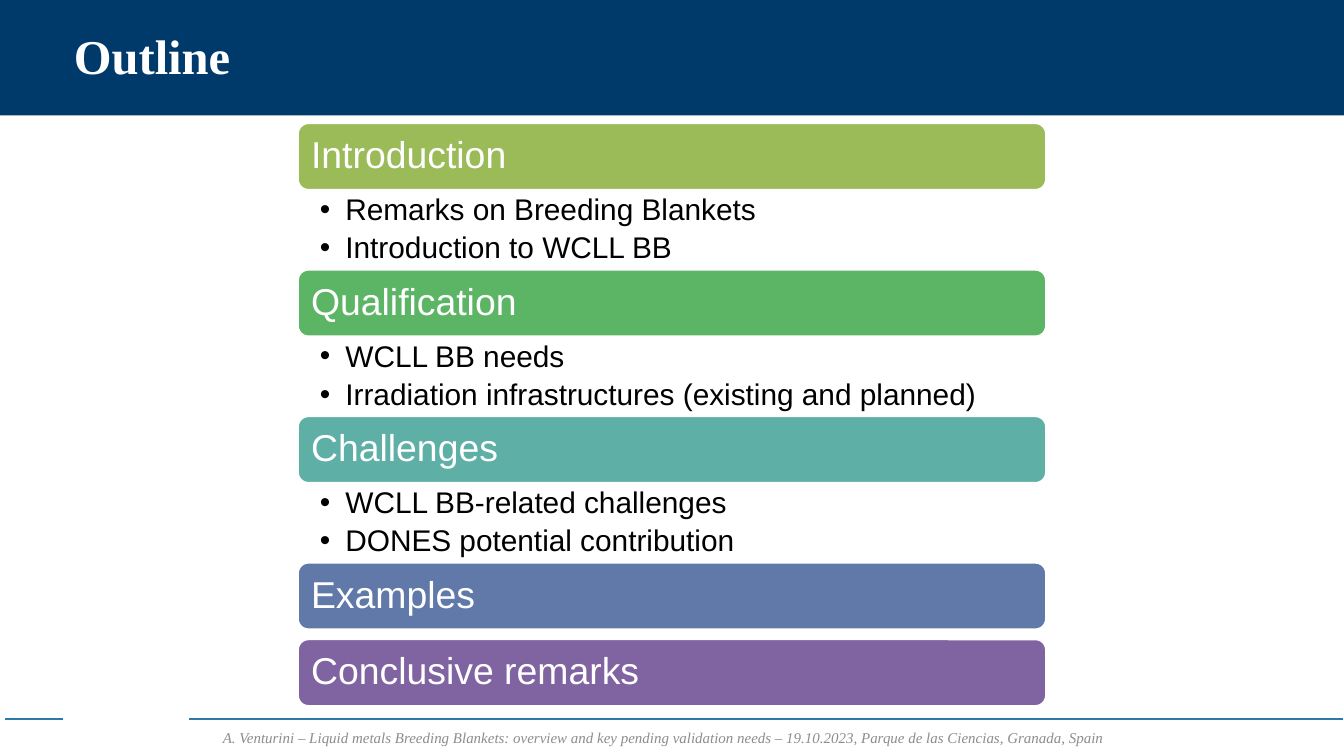
from lxml import etree
from pptx import Presentation
from pptx.dml.color import RGBColor
from pptx.enum.shapes import MSO_CONNECTOR, MSO_SHAPE
from pptx.enum.text import MSO_ANCHOR, PP_ALIGN
from pptx.oxml.ns import qn
from pptx.util import Inches, Pt

# Content
TITLE = "Outline"
FOOTER = ("A. Venturini – Liquid metals Breeding Blankets: overview and key pending "
          "validation needs – 19.10.2023, Parque de las Ciencias, Granada, Spain")
SECTIONS = [
    ("Introduction", "olive", ["Remarks on Breeding Blankets", "Introduction to WCLL BB"]),
    ("Qualification", "green", ["WCLL BB needs",
                                "Irradiation infrastructures (existing and planned)"]),
    ("Challenges", "teal", ["WCLL BB-related challenges", "DONES potential contribution"]),
    ("Examples", "blue", []),
    ("Conclusive remarks", "purple", []),
]
COLORS = {
    "navy": "003A6A", "rule": "2D79AA", "gray": "8C8C8C", "white": "FFFFFF",
    "black": "000000", "olive": "9BBB59", "green": "5CB565", "teal": "5EAFA6",
    "blue": "6179A8", "purple": "8064A2",
}

# Layout, in inches
SLIDE_WIDTH = 10
SLIDE_HEIGHT = SLIDE_WIDTH * 9 / 16
BAR_LEFT, BAR_TOP, BAR_WIDTH, BAR_HEIGHT = 2.21, 0.91, 5.58, 0.51
BULLETS_HEIGHT, BAR_GAP = 0.58, 0.06
BULLET_INDENT = 0.19
RULE_Y = 5.35
RULES = [(0.04, 0.47), (1.41, 9.99)]


def color(name):
    return RGBColor.from_string(COLORS[name])


def box(left, top, width, height):
    return [Inches(value) for value in (left, top, width, height)]


def set_frame(frame, anchor, insets):
    frame.word_wrap = True
    frame.vertical_anchor = anchor
    (frame.margin_left, frame.margin_top,
     frame.margin_right, frame.margin_bottom) = [Inches(inset) for inset in insets]


def write(paragraph, text, font_name, size, color_name, bold=False, italic=False):
    paragraph.alignment = PP_ALIGN.LEFT
    run = paragraph.add_run()
    run.text = text
    run.font.name = font_name
    run.font.size = Pt(size)
    run.font.bold = bold
    run.font.italic = italic
    run.font.color.rgb = color(color_name)


def add_bullet(paragraph):
    properties = paragraph._p.get_or_add_pPr()
    properties.set("marL", str(Inches(BULLET_INDENT)))
    properties.set("indent", str(-Inches(BULLET_INDENT)))
    etree.SubElement(properties, qn("a:buFont")).set("typeface", "Arial")
    etree.SubElement(properties, qn("a:buChar")).set("char", "•")


def add_bar(slide, top, text, fill):
    bar = slide.shapes.add_shape(MSO_SHAPE.ROUNDED_RECTANGLE,
                                 *box(BAR_LEFT, top, BAR_WIDTH, BAR_HEIGHT))
    bar.shadow.inherit = False
    bar.fill.solid()
    bar.fill.fore_color.rgb = color(fill)
    bar.line.color.rgb = color("white")
    bar.line.width = Pt(2)
    set_frame(bar.text_frame, MSO_ANCHOR.MIDDLE, (0.08, 0.08, 0.08, 0.08))
    paragraph = bar.text_frame.paragraphs[0]
    paragraph.line_spacing = 0.9
    write(paragraph, text, "Arial", 20, "white")


def add_bullets(slide, top, items):
    text_box = slide.shapes.add_textbox(*box(BAR_LEFT, top, BAR_WIDTH, BULLETS_HEIGHT))
    frame = text_box.text_frame
    set_frame(frame, MSO_ANCHOR.TOP, (0.17, 0.03, 0.16, 0.03))
    for index, item in enumerate(items):
        paragraph = frame.add_paragraph() if index else frame.paragraphs[0]
        paragraph.line_spacing = 0.9
        paragraph.space_after = Pt(3.2)
        add_bullet(paragraph)
        write(paragraph, item, "Arial", 16, "black")


def main():
    presentation = Presentation()
    presentation.slide_width = Inches(SLIDE_WIDTH)
    presentation.slide_height = Inches(SLIDE_HEIGHT)
    slide = presentation.slides.add_slide(presentation.slide_layouts[5])

    # Header band, placed behind the title
    band = slide.shapes.add_shape(MSO_SHAPE.RECTANGLE, *box(0, 0, SLIDE_WIDTH, 0.86))
    band.shadow.inherit = False
    band.fill.solid()
    band.fill.fore_color.rgb = color("navy")
    band.line.fill.background()
    slide.shapes._spTree.insert(2, band._element)

    # Title
    title = slide.shapes.title
    title.left, title.top, title.width, title.height = box(0.45, 0.19, 9, 0.44)
    set_frame(title.text_frame, MSO_ANCHOR.MIDDLE, (0.1, 0, 0.1, 0))
    write(title.text_frame.paragraphs[0], TITLE, "Times New Roman", 26, "white", bold=True)

    # Footer text and rules
    footer = slide.shapes.add_textbox(*box(1.56, RULE_Y, 8.2, 0.28))
    set_frame(footer.text_frame, MSO_ANCHOR.MIDDLE, (0.1, 0.05, 0.1, 0.05))
    write(footer.text_frame.paragraphs[0], FOOTER, "Times New Roman", 8, "gray", italic=True)
    for start, end in RULES:
        rule = slide.shapes.add_connector(MSO_CONNECTOR.STRAIGHT, Inches(start),
                                          Inches(RULE_Y), Inches(end), Inches(RULE_Y))
        rule.line.color.rgb = color("rule")
        rule.line.width = Pt(1.5)
        etree.SubElement(rule._element.spPr, qn("a:effectLst"))

    # Section bars, each followed by its bullets or a small gap
    top = BAR_TOP
    for heading, fill, items in SECTIONS:
        add_bar(slide, top, heading, fill)
        top += BAR_HEIGHT
        if items:
            add_bullets(slide, top, items)
        top += BULLETS_HEIGHT if items else BAR_GAP

    presentation.save("out.pptx")


if __name__ == "__main__":
    main()
